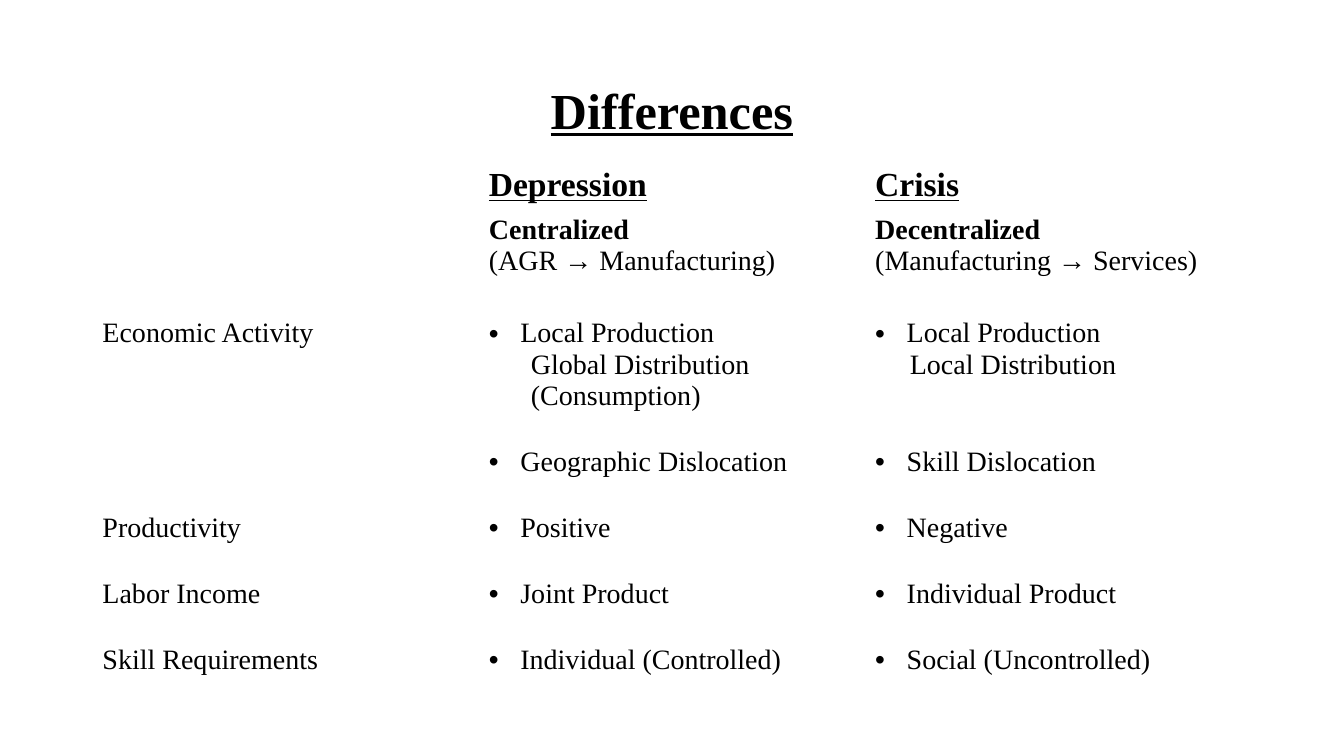
from lxml import etree
from pptx import Presentation
from pptx.dml.color import RGBColor
from pptx.enum.text import MSO_ANCHOR, PP_ALIGN
from pptx.oxml.ns import qn
from pptx.util import Pt

PX = 9525
FONT = "Times New Roman"
BLACK = "000000"
CENTER = PP_ALIGN.CENTER
MIDDLE = MSO_ANCHOR.MIDDLE
TOP = MSO_ANCHOR.TOP

LEFT, WIDTH = 88, 1104
HANG = 30
HEIGHTS = [45, 99, 122, 63, 63, 63, 63]
HEADS = ["Depression", "Crisis"]
SHIFTS = [
    ("Centralized", "(AGR → Manufacturing)"),
    ("Decentralized", "(Manufacturing → Services)"),
]
# Row label, then for each column: bullet, indent of further lines, those lines
POINTS = [
    ("Economic Activity",
     ("Local Production", 40, "Global Distribution", "(Consumption)"),
     ("Local Production", 33, "Local Distribution")),
    ("", ("Geographic Dislocation", 0), ("Skill Dislocation", 0)),
    ("Productivity", ("Positive", 0), ("Negative", 0)),
    ("Labor Income", ("Joint Product", 0), ("Individual Product", 0)),
    ("Skill Requirements",
     ("Individual (Controlled)", 0), ("Social (Uncontrolled)", 0)),
]


def px(count):
    return count * PX


def paint(font, color):
    font.color.rgb = RGBColor.from_string(color)


def add_run(para, text, size=20, bold=False, line=False):
    run = para.add_run()
    run.text = text
    font = run.font
    font.name, font.size = FONT, Pt(size)
    font.bold, font.underline = bold, line
    paint(font, BLACK)


def indent(para, left, first=0, mark=None):
    props = para._p.get_or_add_pPr()
    props.set("marL", str(px(left)))
    props.set("indent", str(px(first)))
    if mark:
        etree.SubElement(props, qn("a:buFont")).set("typeface", "Arial")
        etree.SubElement(props, qn("a:buChar")).set("char", mark)


def add_title(slide):
    title = slide.shapes.title
    title.left, title.top = px(LEFT), px(38)
    title.width, title.height = px(WIDTH), px(139)
    frame = title.text_frame
    frame.vertical_anchor = MIDDLE
    para = frame.paragraphs[0]
    para.alignment = CENTER
    para.line_spacing = 0.9
    add_run(para, "Differences", 36, bold=True, line=True)


def add_grid(slide):
    """Add the table with plain, unfilled cells."""
    grid = slide.shapes.add_table(
        len(HEIGHTS), 3, px(LEFT), px(154), px(WIDTH), px(sum(HEIGHTS))).table
    grid.first_row = grid.horz_banding = False
    for row, height in zip(grid.rows, HEIGHTS):
        row.height = px(height)
        for cell in row.cells:
            cell.fill.background()
            cell.vertical_anchor = TOP
    return grid


def fill_point(cell, point, left, *more):
    frame = cell.text_frame
    para = frame.paragraphs[0]
    indent(para, HANG, -HANG, "•")
    add_run(para, point)
    for text in more:
        para = frame.add_paragraph()
        indent(para, left)
        add_run(para, text)


def fill_heads(grid):
    for col, (head, (kind, shift)) in enumerate(zip(HEADS, SHIFTS), 1):
        para = grid.cell(0, col).text_frame.paragraphs[0]
        add_run(para, head, 24, bold=True, line=True)
        frame = grid.cell(1, col).text_frame
        add_run(frame.paragraphs[0], kind, bold=True)
        add_run(frame.add_paragraph(), shift)


def fill_points(grid):
    for row, (label, *points) in enumerate(POINTS, 2):
        if label:
            add_run(grid.cell(row, 0).text_frame.paragraphs[0], label)
        for col, point in enumerate(points, 1):
            fill_point(grid.cell(row, col), *point)


def main():
    deck = Presentation()
    deck.slide_width, deck.slide_height = px(1280), px(720)
    slide = deck.slides.add_slide(deck.slide_layouts[5])
    add_title(slide)
    grid = add_grid(slide)
    fill_heads(grid)
    fill_points(grid)
    deck.save("out.pptx")


if __name__ == "__main__":
    main()
